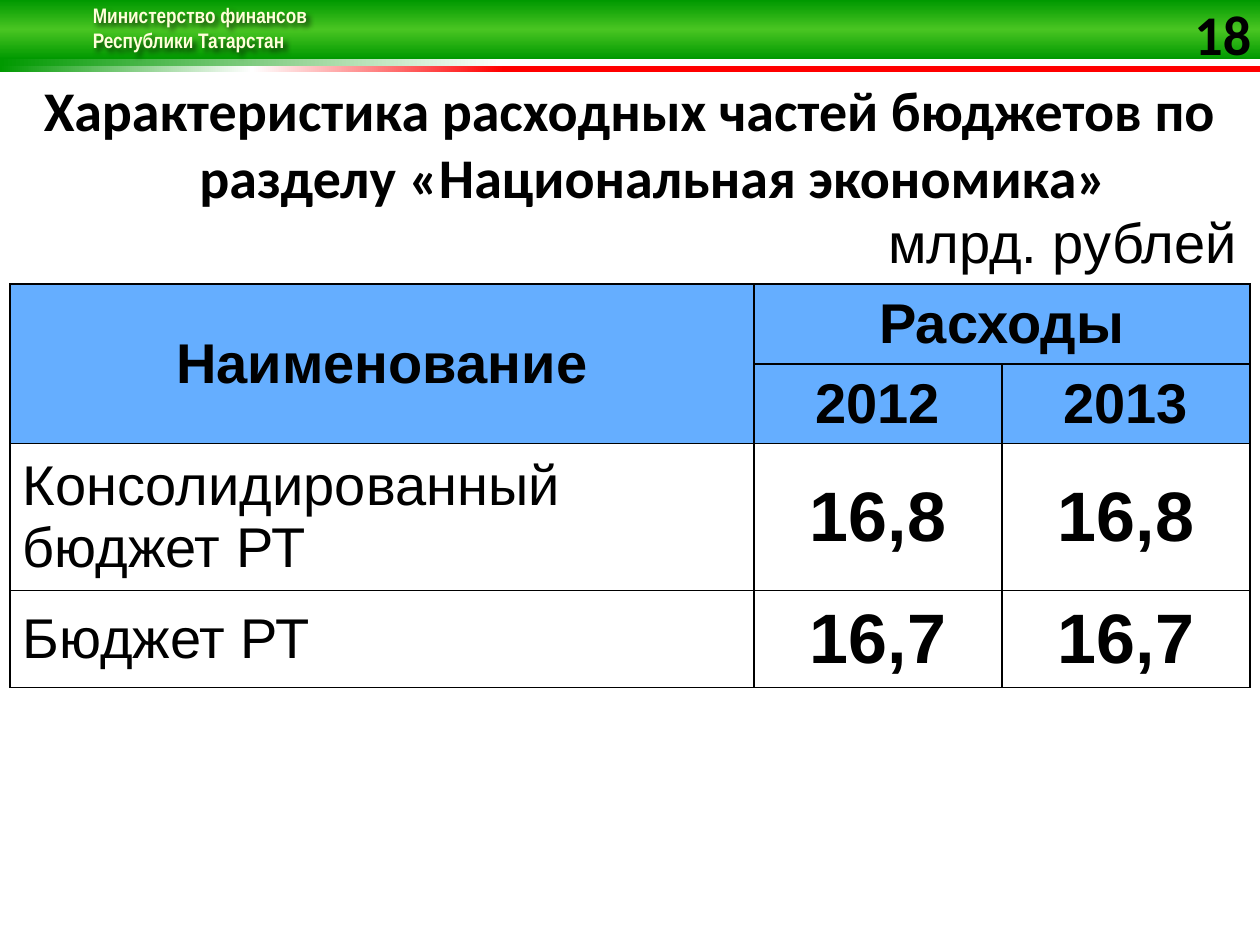
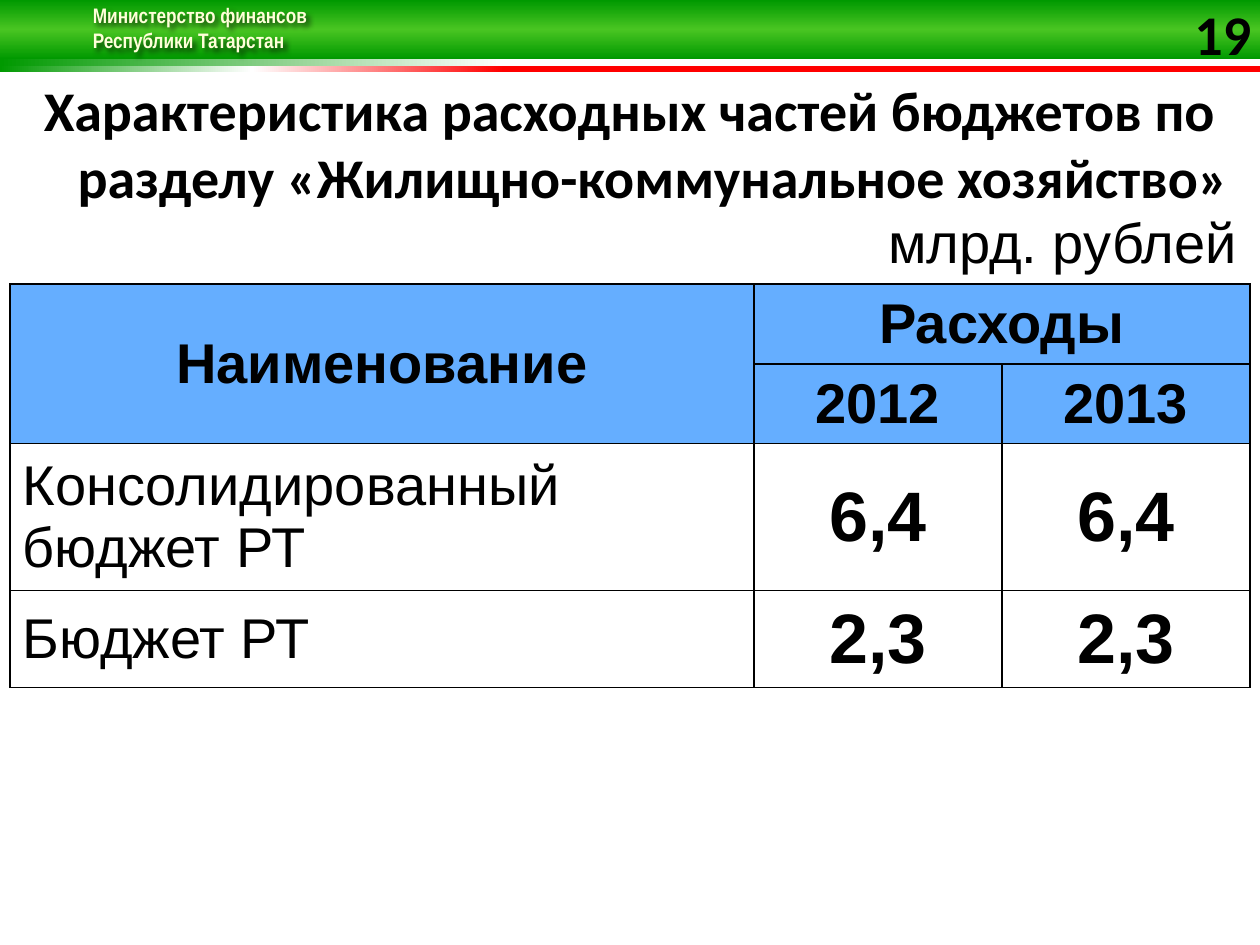
import pptx
import pptx.util
import pptx.dml.color
import pptx.enum.shapes
import pptx.enum.text
import pptx.oxml
import pptx.oxml.ns

Pt = pptx.util.Pt
ALIGN = pptx.enum.text.PP_ALIGN
ANCHOR = pptx.enum.text.MSO_ANCHOR
NS = pptx.oxml.ns.nsdecls("a")
NO_GRID_STYLE = "{2D5ABB26-0587-4C30-8999-92F81FD0307C}"

WIDTH, HEIGHT = 720, 540
BLACK, HEADER_BLUE, CREAM = "000000", "65AEFF", "FFFFD9"
GREEN, LIGHT_GREEN, RED, WHITE = "009900", "49C522", "FF0000", "FFFFFF"

# Top, height, gradient stops and angle of the header bands
BANDS = [
    (33.8, 3.7, [(0, WHITE), (60, WHITE), (100, GREEN)], 180),
    (37.5, 3.7, [(60, RED), (80, WHITE), (100, GREEN)], 180),
    (0, 33.8, [(0, GREEN), (50, LIGHT_GREEN), (100, GREEN)], 90),
]

SLIDES = [
    (18, "Национальная экономика", "16,8", "16,7"),
    (19, "Жилищно-коммунальное хозяйство", "6,4", "2,3"),
]


def color(value):
    return pptx.dml.color.RGBColor.from_string(value)


def write(tf, text, size=32, font="Arial", fill=BLACK, bold=False, align=ALIGN.LEFT):
    p = tf.paragraphs[0]
    p.text = text
    p.alignment = align
    for r in p.runs:
        r.font.size = Pt(size)
        r.font.name = font
        r.font.bold = bold
        r.font.color.rgb = color(fill)
    return p


def add_text(slide, box, text, margins=None, **fmt):
    sp = slide.shapes.add_textbox(*map(Pt, box))
    tf = sp.text_frame
    tf.word_wrap = True
    if margins is not None:
        tf.margin_left = tf.margin_right = tf.margin_top = tf.margin_bottom = Pt(margins)
    return sp, write(tf, text, **fmt)


def add_band(slide, box, stops, angle):
    sp = slide.shapes.add_shape(pptx.enum.shapes.MSO_SHAPE.RECTANGLE, *map(Pt, box))
    sp.shadow.inherit = False
    sp.line.fill.background()
    marks = "".join(f'<a:gs pos="{pos * 1000}"><a:srgbClr val="{c}"/></a:gs>' for pos, c in stops)
    grad = pptx.oxml.parse_xml(
        f'<a:gradFill {NS} rotWithShape="1"><a:gsLst>{marks}</a:gsLst>'
        f'<a:lin ang="{angle * 60000}" scaled="0"/></a:gradFill>')
    sp._element.spPr.find(pptx.oxml.ns.qn("a:prstGeom")).addnext(grad)


def add_header(slide, box, number):
    left, top, width, _ = box
    for offset, height, stops, angle in BANDS:
        add_band(slide, (left, top + offset, width, height), stops, angle)
    # Ministry name with a soft shadow
    sp, _ = add_text(slide, (left + 46, top - 2, 138, 51),
                     "Министерство финансов\vРеспублики Татарстан",
                     size=12, font="Arial Narrow", fill=CREAM, bold=True)
    sp._element.spPr.append(pptx.oxml.parse_xml(
        f'<a:effectLst {NS}><a:outerShdw blurRad="38100" dist="38100" dir="2700000">'
        '<a:srgbClr val="000000"><a:alpha val="60000"/></a:srgbClr></a:outerShdw></a:effectLst>'))
    # Slide number
    add_text(slide, (left + width - 42.5, top, 42.5, 39), str(number), margins=0,
             font="Calibri", bold=True, align=ALIGN.CENTER)


def add_title(slide, box, section):
    _, p = add_text(slide, box, f"Характеристика расходных частей бюджетов по разделу «{section}»",
                    font="Calibri", bold=True, align=ALIGN.CENTER)
    pPr = p._p.get_or_add_pPr()
    pPr.set("marL", str(Pt(27)))
    pPr.set("indent", str(Pt(-27)))


def set_borders(cell, sides):
    tcPr = cell._tc.get_or_add_tcPr()
    for i, side in enumerate(sides):
        tcPr.insert(i, pptx.oxml.parse_xml(
            f'<a:ln{side} {NS} w="{Pt(1)}"><a:solidFill><a:srgbClr val="{BLACK}"/>'
            f'</a:solidFill></a:ln{side}>'))


def add_budget_table(slide, box, consolidated, republic):
    left, top, width, heights = box
    rows = [
        ["млрд. рублей", "", ""],
        ["Наименование", "Расходы", ""],
        ["", "2012", "2013"],
        ["Консолидированный бюджет РТ", consolidated, consolidated],
        ["Бюджет РТ", republic, republic],
    ]
    frame = slide.shapes.add_table(len(rows), 3, *map(Pt, (left, top, width, sum(heights))))
    table = frame.table
    table.first_row = table.horz_banding = False
    table._tbl.tblPr.find(pptx.oxml.ns.qn("a:tableStyleId")).text = NO_GRID_STYLE
    for column, share in zip(table.columns, (0.6, 0.2, 0.2)):
        column.width = Pt(width * share)
    for row, height in zip(table.rows, heights):
        row.height = Pt(height)

    # Unit line, then two header rows, then values
    for i, row in enumerate(rows):
        for j, text in enumerate(row):
            cell = table.cell(i, j)
            cell.vertical_anchor = ANCHOR.MIDDLE
            is_header, is_value = i in (1, 2), i > 2 and j > 0
            if is_header:
                cell.fill.solid()
                cell.fill.fore_color.rgb = color(HEADER_BLUE)
            else:
                cell.fill.background()
            align = ALIGN.RIGHT if i == 0 else ALIGN.CENTER if is_header or is_value else ALIGN.LEFT
            if text:
                write(cell.text_frame, text, size=40 if is_value else 32,
                      bold=is_header or is_value, align=align)
            set_borders(cell, "LRTB" if i else "B")
    for start, end in [((0, 0), (0, 2)), ((1, 0), (2, 0)), ((1, 1), (1, 2))]:
        table.cell(*start).merge(table.cell(*end))


def add_budget_slide(prs, number, section, consolidated, republic):
    slide = prs.slides.add_slide(prs.slide_layouts[6])
    add_header(slide, (0, 0, WIDTH, 41), number)
    add_title(slide, (0, 39.6, WIDTH, 83.5), section)
    add_budget_table(slide, (5.75, 116.6, 708.5, (43, 43, 43, 79, 52)), consolidated, republic)


def main():
    prs = pptx.Presentation()
    prs.slide_width, prs.slide_height = Pt(WIDTH), Pt(HEIGHT)
    for content in SLIDES:
        add_budget_slide(prs, *content)
    prs.save("out.pptx")


if __name__ == "__main__":
    main()
